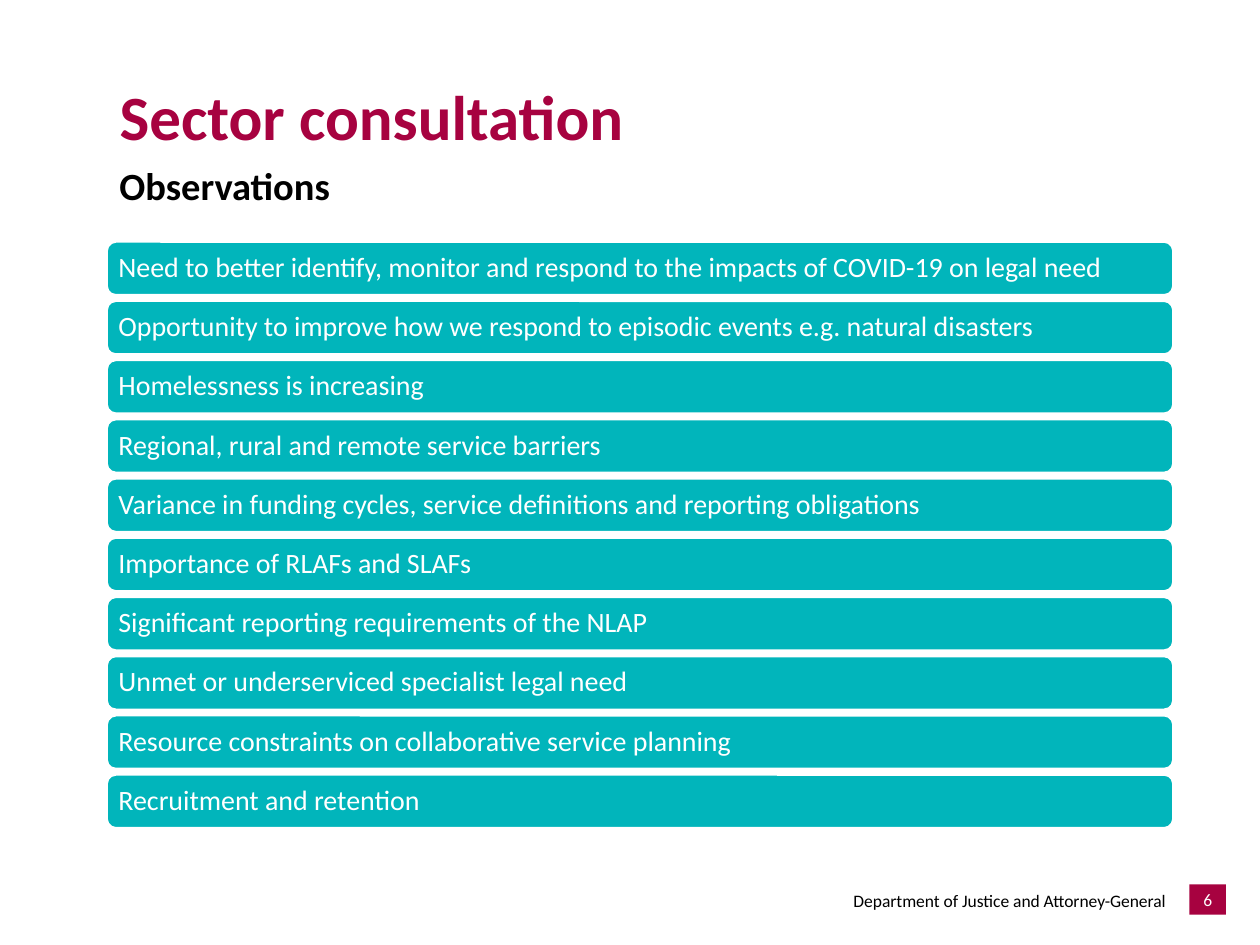
import pptx
import pptx.util
import pptx.dml.color
import pptx.enum.shapes
import pptx.enum.text

Inches = pptx.util.Inches
RGBColor = pptx.dml.color.RGBColor
SHAPE = pptx.enum.shapes.MSO_SHAPE
ALIGN = pptx.enum.text.PP_ALIGN
ANCHOR = pptx.enum.text.MSO_ANCHOR

MAROON = RGBColor(0xA7, 0x02, 0x40)
TEAL = RGBColor(0x01, 0xB5, 0xBB)
BLACK = RGBColor(0, 0, 0)
WHITE = RGBColor(255, 255, 255)

# Grid: one column of bars, one row per observation
COLUMN_LEFT, COLUMN_WIDTH = 0.85, 8.46
FIRST_ROW, ROW_PITCH, BAR_HEIGHT = 1.92, 0.47, 0.42


def write(shape, text, size, color, bold=False, align=ALIGN.LEFT,
          anchor=ANCHOR.MIDDLE, spacing=1.0, side=0.1, edge=0.05):
    frame = shape.text_frame
    frame.text = text
    frame_format = {"word_wrap": True, "vertical_anchor": anchor,
                    "margin_left": Inches(side), "margin_right": Inches(side),
                    "margin_top": Inches(edge), "margin_bottom": Inches(edge)}
    for name, value in frame_format.items():
        setattr(frame, name, value)
    paragraph = frame.paragraphs[0]
    paragraph.alignment = align
    paragraph.line_spacing = spacing
    font = paragraph.runs[0].font
    font_format = {"name": "Calibri", "size": pptx.util.Pt(size), "bold": bold}
    for name, value in font_format.items():
        setattr(font, name, value)
    font.color.rgb = color


def add_block(kind, left, top, width, height, fill):
    block = slide.shapes.add_shape(kind, Inches(left), Inches(top),
                                   Inches(width), Inches(height))
    block.shadow.inherit = False
    block.fill.solid()
    block.fill.fore_color.rgb = fill
    return block


deck = pptx.Presentation()
deck.slide_width, deck.slide_height = Inches(10), Inches(7.5)
slide = deck.slides.add_slide(deck.slide_layouts[5])

# Title
title = slide.shapes.title
title_place = {"left": COLUMN_LEFT, "top": 0.4, "width": 8.26, "height": 1.1}
for name, value in title_place.items():
    setattr(title, name, Inches(value))
write(title, "Sector consultation", 36, MAROON, bold=True, spacing=0.9)

# Subtitle
subtitle = slide.shapes.add_textbox(Inches(COLUMN_LEFT), Inches(1.28),
                                    Inches(COLUMN_WIDTH), Inches(0.45))
write(subtitle, "Observations", 22, BLACK, bold=True, anchor=ANCHOR.TOP,
      spacing=0.9)

# Observation bars
observations = [
    "Need to better identify, monitor and respond to the impacts of COVID-19 on legal need",
    "Opportunity to improve how we respond to episodic events e.g. natural disasters",
    "Homelessness is increasing",
    "Regional, rural and remote service barriers",
    "Variance in funding cycles, service definitions and reporting obligations",
    "Importance of RLAFs and SLAFs",
    "Significant reporting requirements of the NLAP",
    "Unmet or underserviced specialist legal need",
    "Resource constraints on collaborative service planning",
    "Recruitment and retention",
]
for row, observation in enumerate(observations):
    bar = add_block(SHAPE.ROUNDED_RECTANGLE, COLUMN_LEFT,
                    FIRST_ROW + row * ROW_PITCH, COLUMN_WIDTH, BAR_HEIGHT, TEAL)
    bar.line.color.rgb = WHITE
    bar.line.width = pptx.util.Pt(1)
    write(bar, observation, 16, WHITE, spacing=0.9, side=0.07)

# Footer and page number
department = slide.shapes.add_textbox(Inches(3.69), Inches(7.03),
                                      Inches(5.66), Inches(0.24))
write(department, "Department of Justice and Attorney-General", 10, BLACK,
      align=ALIGN.RIGHT)
page_number = add_block(SHAPE.RECTANGLE, 9.44, 7.02, 0.29, 0.24, MAROON)
page_number.line.fill.background()
write(page_number, "6", 10, WHITE, align=ALIGN.CENTER, side=0, edge=0)

deck.save("out.pptx")
